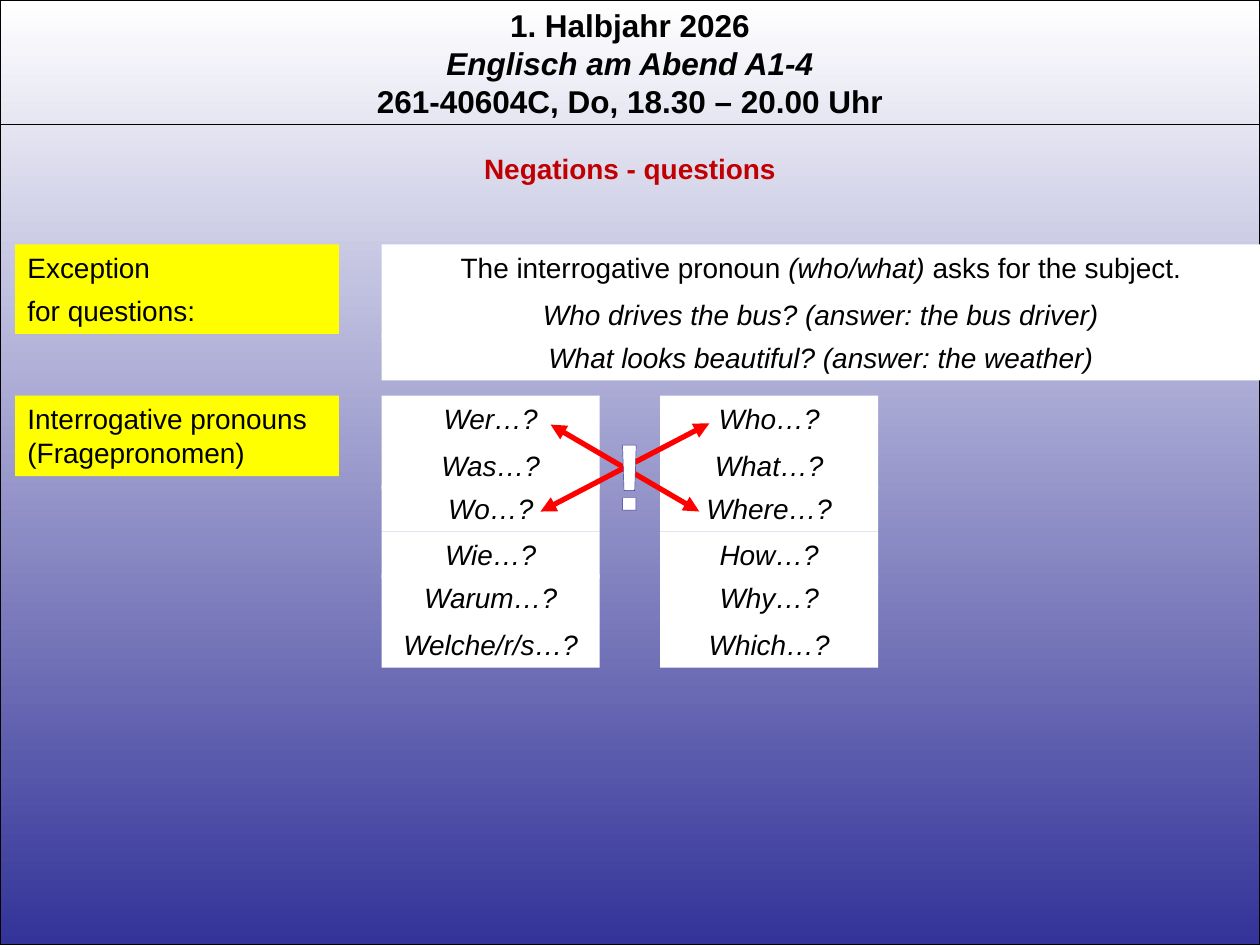
"""Build the slide on interrogative pronouns and exceptions for questions."""
from dataclasses import dataclass
from typing import Any

import pptx
import pptx.dml.color
import pptx.enum.shapes
import pptx.enum.text
import pptx.oxml
import pptx.oxml.ns
import pptx.util

Inches = pptx.util.Inches
Align = pptx.enum.text.PP_ALIGN
Kind = pptx.enum.shapes.MSO_SHAPE
Connector = pptx.enum.shapes.MSO_CONNECTOR

WIDTH, HEIGHT = 10, 7.5
LINE_HEIGHT = 0.37
LABEL_LEFT, LABEL_WIDTH = 0.12, 2.57
EXAMPLE_LEFT = 3.03
EXAMPLE_WIDTH = WIDTH - EXAMPLE_LEFT
WORD_LEFTS, WORD_WIDTH = (EXAMPLE_LEFT, 5.24), 1.73
PRONOUN_TOP = 3.14
ROW_STEPS = (0.37, 0.34)
BLACK, WHITE, YELLOW, RED, DARK_RED, BLUE = (
    "000000", "FFFFFF", "FFFF00", "FF0000", "C00000", "333399")

PLAIN = {"name": "Arial", "size": pptx.util.Pt(16), "bold": False, "italic": False}
ITALIC = {**PLAIN, "italic": True}
TITLE = {**PLAIN, "bold": True}
HEADER = {**TITLE, "size": pptx.util.Pt(18)}
HEADER_ITALIC = {**HEADER, "italic": True}
MARK = {**TITLE, "size": pptx.util.Pt(54)}

Span = tuple[str, dict[str, Any]]


@dataclass
class Panel:
    """A filled box; each line is a list of formatted spans."""
    left: float
    top: float
    width: float
    height: float
    fill: str
    lines: list[list[Span]]
    align: Any = Align.CENTER


@dataclass
class Arrow:
    """A straight line between two points."""
    start: tuple[float, float]
    end: tuple[float, float]


PRONOUNS = [
    ("Wer…?", "Who…?"), ("Was…?", "What…?"), ("Wo…?", "Where…?"),
    ("Wie…?", "How…?"), ("Warum…?", "Why…?"), ("Welche/r/s…?", "Which…?"),
]


def color(hex_value: str) -> pptx.dml.color.RGBColor:
    """Turn a hex string into a colour."""
    return pptx.dml.color.RGBColor.from_string(hex_value)


def assign(target: Any, values: dict[str, Any]) -> None:
    """Set every attribute named in the values."""
    for name, value in values.items():
        setattr(target, name, value)


def place(box: Any, left: float, top: float, width: float, height: float) -> None:
    """Position a shape in inches."""
    assign(box, {"left": Inches(left), "top": Inches(top),
                 "width": Inches(width), "height": Inches(height)})


def write(box: Any, lines: list[list[Span]], align: Any = Align.CENTER,
          ink: str = BLACK, wrap: bool = True) -> None:
    """Fill a shape with formatted lines."""
    frame = box.text_frame
    assign(frame, {"word_wrap": wrap,
                   "auto_size": pptx.enum.text.MSO_AUTO_SIZE.SHAPE_TO_FIT_TEXT,
                   "vertical_anchor": pptx.enum.text.MSO_ANCHOR.TOP})
    for index, line in enumerate(lines):
        para = frame.paragraphs[0] if index == 0 else frame.add_paragraph()
        para.alignment = align
        for text, values in line:
            span = para.add_run()
            span.text = text
            assign(span.font, values)
            span.font.color.rgb = color(ink)


def add_text(page: Any, area: tuple[float, float, float, float],
             lines: list[list[Span]], ink: str = BLACK, wrap: bool = True) -> Any:
    """Add an unfilled text box."""
    box = page.shapes.add_textbox(*map(Inches, area))
    write(box, lines, ink=ink, wrap=wrap)
    return box


def add_panel(page: Any, panel: Panel) -> None:
    """Add a filled box without outline."""
    box = page.shapes.add_shape(Kind.RECTANGLE, *map(
        Inches, (panel.left, panel.top, panel.width, panel.height)))
    box.shadow.inherit = False
    box.fill.solid()
    box.fill.fore_color.rgb = color(panel.fill)
    box.line.fill.background()
    write(box, panel.lines, panel.align)


def add_line(page: Any, arrow: Arrow, ink: str, weight: float, heads: bool) -> None:
    """Add a straight line, with a triangle at both ends if asked."""
    line = page.shapes.add_connector(
        Connector.STRAIGHT, *map(Inches, arrow.start + arrow.end))
    line.line.color.rgb = color(ink)
    line.line.width = pptx.util.Pt(weight)
    properties = line.element.spPr
    if heads:
        outline = properties.find(pptx.oxml.ns.qn("a:ln"))
        for end in ("a:headEnd", "a:tailEnd"):
            outline.append(pptx.oxml.parse_xml(
                f'<{end} {pptx.oxml.ns.nsdecls("a")} type="triangle"/>'))
    properties.append(pptx.oxml.parse_xml(
        f'<a:effectLst {pptx.oxml.ns.nsdecls("a")}/>'))


def add_backdrop(page: Any) -> None:
    """Cover the page with a vertical gradient in a thin frame."""
    backdrop = page.shapes.add_shape(
        Kind.RECTANGLE, 0, 0, Inches(WIDTH), Inches(HEIGHT))
    backdrop.shadow.inherit = False
    backdrop.fill.gradient()
    backdrop.fill.gradient_angle = 270
    for stop, shade, position in zip(backdrop.fill.gradient_stops, (WHITE, BLUE), (0, 1)):
        stop.color.rgb = color(shade)
        stop.position = position
    backdrop.line.color.rgb = color(BLACK)
    backdrop.line.width = pptx.util.Pt(0.75)


def add_mark(page: Any) -> None:
    """Add the outlined exclamation mark."""
    mark = add_text(page, (4.77, 3.25, 0.45, 1.01), [[("!", MARK)]], WHITE, wrap=False)
    span = mark.text_frame.paragraphs[0].runs[0]
    span.font.element if hasattr(span.font, "element") else None
    outline = pptx.oxml.parse_xml(
        f'<a:ln {pptx.oxml.ns.nsdecls("a")} w="{pptx.util.Pt(0.52)}"><a:solidFill>'
        f'<a:srgbClr val="{BLUE}"/></a:solidFill></a:ln>')
    mark.element.find(".//" + pptx.oxml.ns.qn("a:rPr")).insert(0, outline)


def example_panels() -> list[Panel]:
    """List the labels and the example sentences."""
    labels = [
        (1.94, LINE_HEIGHT, ["Exception"]),
        (2.28, LINE_HEIGHT, ["for questions:"]),
        (PRONOUN_TOP, 0.64, ["Interrogative pronouns", "(Fragepronomen)"]),
    ]
    examples = [
        (1.94, [("The interrogative pronoun ", PLAIN), ("(who/what) ", ITALIC),
                ("asks for the subject.", PLAIN)]),
        (2.31, [("Who drives the bus? (answer: the bus driver)", ITALIC)]),
        (2.65, [("What looks beautiful? (answer: the weather)", ITALIC)]),
    ]
    return [Panel(LABEL_LEFT, top, LABEL_WIDTH, height, YELLOW,
                  [[(text, PLAIN)] for text in texts], Align.LEFT)
            for top, height, texts in labels] + [
        Panel(EXAMPLE_LEFT, top, EXAMPLE_WIDTH, LINE_HEIGHT, WHITE, [line])
        for top, line in examples]


def pronoun_panels() -> list[Panel]:
    """List the German and English pronouns row by row."""
    panels, top = [], PRONOUN_TOP
    for row, words in enumerate(PRONOUNS):
        panels += [Panel(left, top, WORD_WIDTH, LINE_HEIGHT, WHITE, [[(word, ITALIC)]])
                   for left, word in zip(WORD_LEFTS, words)]
        top += ROW_STEPS[row % 2]
    return panels


def main() -> None:
    """Build and save the deck."""
    deck = pptx.Presentation()
    assign(deck, {"slide_width": Inches(WIDTH), "slide_height": Inches(HEIGHT)})
    page = deck.slides.add_slide(deck.slide_layouts[5])
    add_backdrop(page)
    add_text(page, (0, 0, WIDTH, 1.01), [
        [("1. Halbjahr 2026", HEADER)],
        [("Englisch am Abend A1-4", HEADER_ITALIC)],
        [("261-40604C, Do, 18.30 – 20.00 Uhr", HEADER)]])
    add_line(page, Arrow((0, 0.99), (WIDTH, 0.99)), BLACK, 0.75, heads=False)
    title = page.shapes.title
    place(title, 0, 1.15, WIDTH, LINE_HEIGHT)
    write(title, [[("Negations - questions", TITLE)]], ink=DARK_RED)
    title.element.getparent().append(title.element)
    for panel in example_panels() + pronoun_panels():
        add_panel(page, panel)
    for arrow in (Arrow((4.29, 4.06), (5.63, 3.36)), Arrow((4.37, 3.37), (5.55, 4.06))):
        add_line(page, arrow, RED, 3, heads=True)
    add_mark(page)
    deck.save("out.pptx")


if __name__ == "__main__":
    main()
